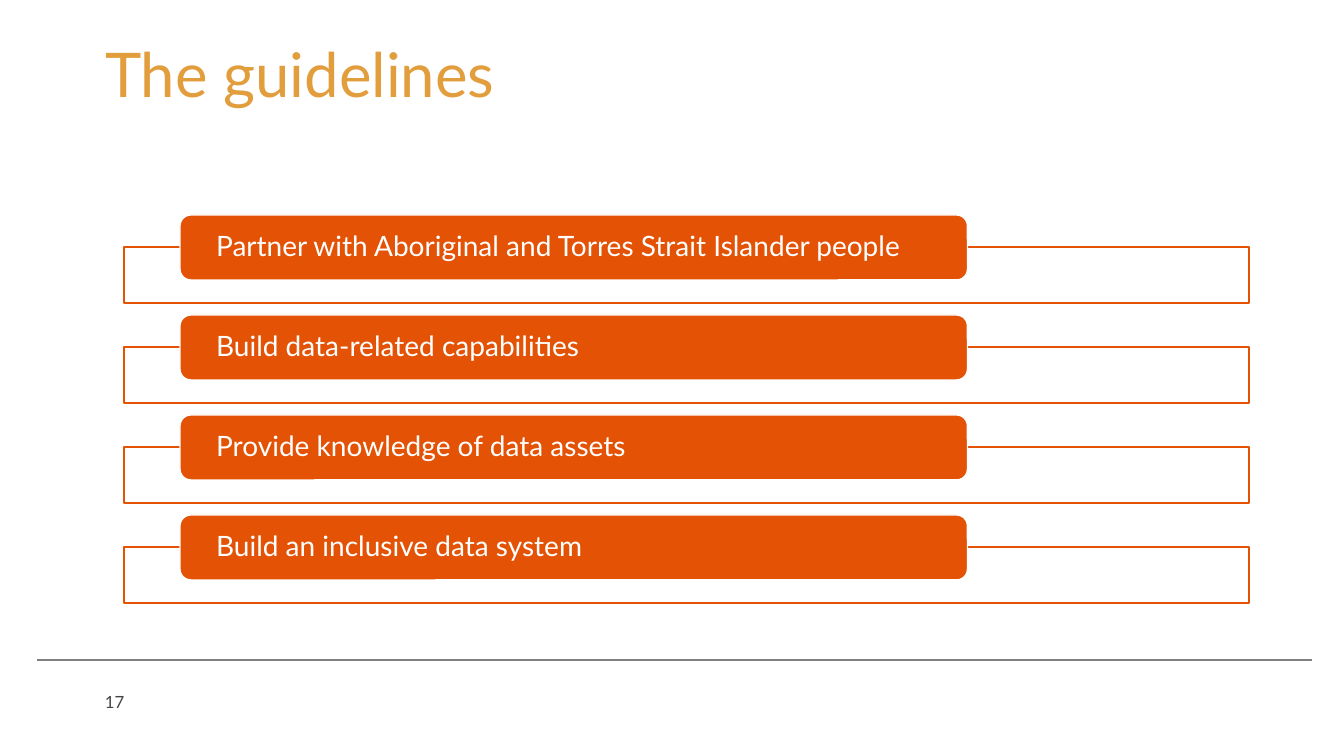
from lxml.etree import SubElement
from pptx import Presentation
from pptx.dml.color import RGBColor
from pptx.enum.shapes import MSO_CONNECTOR as Connector, MSO_SHAPE as Shape
from pptx.enum.text import MSO_ANCHOR as Anchor, MSO_AUTO_SIZE as AutoSize, PP_ALIGN as Align
from pptx.oxml.ns import qn
from pptx.util import Emu, Pt

FONT = "Lato"
ORANGE = "E35205"
WHITE = "FFFFFF"
ROW_PITCH = 100
GUIDELINES = [
    "Partner with Aboriginal and Torres Strait Islander people",
    "Build data-related capabilities",
    "Provide knowledge of data assets",
    "Build an inclusive data system",
]


def px(length):
    return Emu(round(length * 914400 / 100.8))


def color(value):
    return RGBColor.from_string(value)


def write(shape, text, size, ink, anchor=Anchor.TOP, inset=(10, 5),
          wrap=True, spacing=None, after=0):
    frame = shape.text_frame
    frame.word_wrap = wrap
    frame.auto_size = AutoSize.NONE
    frame.vertical_anchor = anchor
    frame.margin_left = frame.margin_right = px(inset[0])
    frame.margin_top = frame.margin_bottom = px(inset[1])
    para = frame.paragraphs[0]
    para.alignment = Align.LEFT
    para.space_before = Pt(0)
    para.space_after = Pt(after)
    if spacing is not None:
        para.line_spacing = spacing
    span = para.add_run()
    span.text = text
    span.font.name = FONT
    span.font.size = Pt(size)
    span.font.bold = False
    span.font.color.rgb = color(ink)


def add_block(page, kind, left, top, width, height, fill, line):
    block = page.shapes.add_shape(kind, px(left), px(top), px(width), px(height))
    block.shadow.inherit = False
    block.fill.solid()
    block.fill.fore_color.rgb = color(fill)
    block.line.color.rgb = color(line)
    block.line.width = Pt(1)
    return block


def add_title(page, left, top, width, height):
    title = page.shapes.title
    title.left, title.top = px(left), px(top)
    title.width, title.height = px(width), px(height)
    write(title, "The guidelines", 44, "E29D3D", anchor=Anchor.MIDDLE,
          spacing=Pt(43.7), after=14.6)


def add_guideline(page, text, left, top, width, height):
    frame = add_block(page, Shape.RECTANGLE, left, top + 32, width, height - 32, WHITE, ORANGE)
    fill_color = frame.fill._xPr.find(qn("a:solidFill"))[0]
    SubElement(fill_color, qn("a:alpha"), val="90000")
    label = add_block(page, Shape.ROUNDED_RECTANGLE, left + 56, top, width * 0.7, 65, ORANGE, WHITE)
    write(label, text, 20, WHITE, anchor=Anchor.MIDDLE, inset=(33, 0), spacing=0.9, after=7)


def add_guidelines(page, left, top, width):
    for index, text in enumerate(GUIDELINES):
        add_guideline(page, text, left, top + index * ROW_PITCH, width, 88)


def add_footer(page, left, top, width):
    rule = page.shapes.add_connector(
        Connector.STRAIGHT, px(left), px(top), px(left + width), px(top))
    rule.line.color.rgb = color("808080")
    rule.line.width = Pt(1)
    SubElement(rule._element.spPr, qn("a:effectLst"))
    number = page.shapes.add_textbox(px(left + 58), px(top + 27), px(55), px(30))
    write(number, "17", 12, "454347")


def main():
    deck = Presentation()
    deck.slide_width, deck.slide_height = px(1344), px(756)
    page = deck.slides.add_slide(deck.slide_layouts[5])
    add_footer(page, 37, 660, 1275)
    add_title(page, 95, 39, 1153, 80)
    add_guidelines(page, 124, 215, 1125)
    deck.save("out.pptx")


if __name__ == "__main__":
    main()
